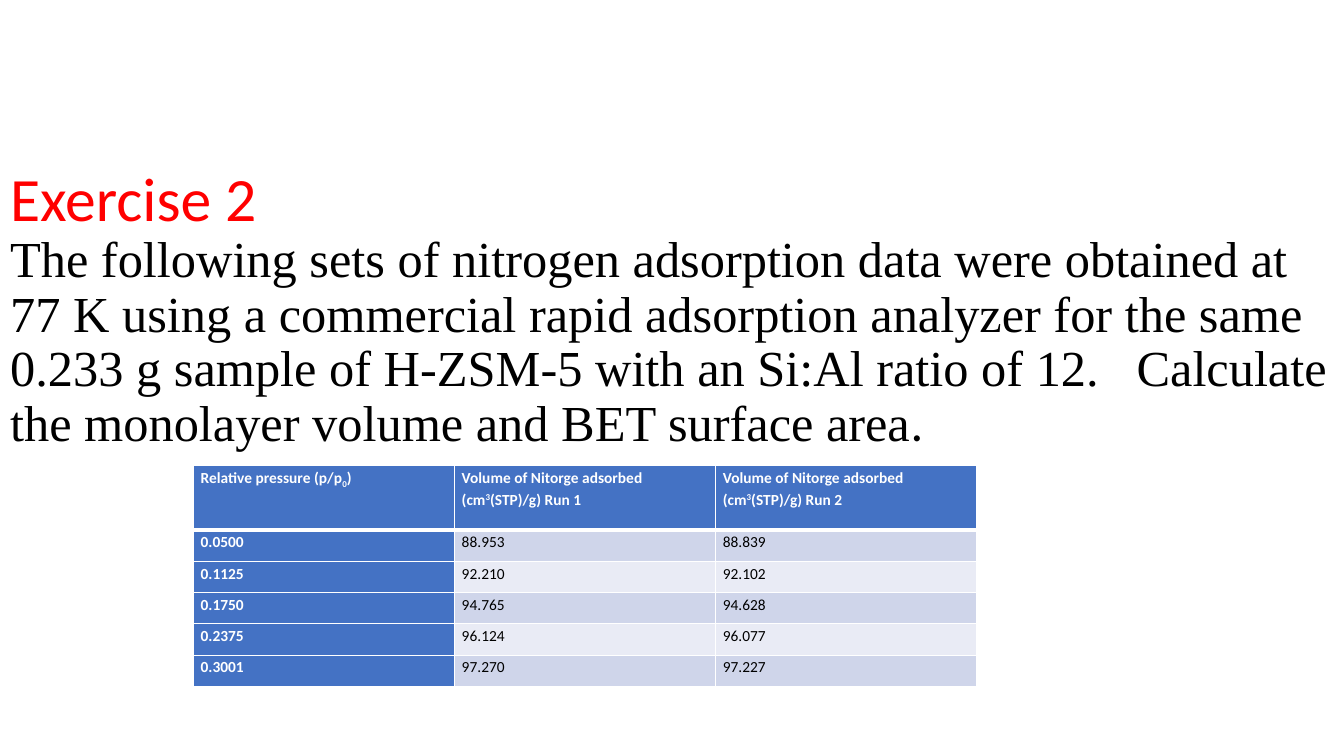
import pptx
import pptx.util
import pptx.dml.color
import pptx.enum.text
import lxml.etree
import pptx.oxml.ns
from pptx.util import Inches

RED = pptx.dml.color.RGBColor(0xFF, 0x00, 0x00)
BLACK = pptx.dml.color.RGBColor(0x00, 0x00, 0x00)
WHITE = pptx.dml.color.RGBColor(0xFF, 0xFF, 0xFF)
BLUE = pptx.dml.color.RGBColor(0x44, 0x72, 0xC4)
BANDS = [
    pptx.dml.color.RGBColor(0xCF, 0xD5, 0xEA),
    pptx.dml.color.RGBColor(0xE9, 0xEB, 0xF5),
]


def add_run(paragraph, text, size, font_name, color):
    run = paragraph.add_run()
    run.text = text
    run.font.size = pptx.util.Pt(size)
    run.font.name = font_name
    run.font.color.rgb = color


def set_borders(cell, widths):
    properties = cell._tc.get_or_add_tcPr()
    for index, (side, width) in enumerate(widths.items()):
        line = lxml.etree.Element(pptx.oxml.ns.qn(f"a:{side}"), w=str(pptx.util.Pt(width)))
        fill = lxml.etree.SubElement(line, pptx.oxml.ns.qn("a:solidFill"))
        lxml.etree.SubElement(fill, pptx.oxml.ns.qn("a:srgbClr"), val=str(WHITE))
        properties.insert(index, line)


presentation = pptx.Presentation()
presentation.slide_width = Inches(13.33)
presentation.slide_height = Inches(7.5)
slide = presentation.slides.add_slide(presentation.slide_layouts[5])

title = slide.shapes.title
title.left, title.top = Inches(0), Inches(0)
title.width, title.height = Inches(13.33), Inches(7.5)
frame = title.text_frame
frame.word_wrap = True
frame.auto_size = pptx.enum.text.MSO_AUTO_SIZE.NONE
frame.vertical_anchor = pptx.enum.text.MSO_ANCHOR.MIDDLE
frame.margin_left = frame.margin_right = Inches(0.1)
frame.margin_top = Inches(0.05)
frame.margin_bottom = Inches(1.4)
paragraph = frame.paragraphs[0]
paragraph.alignment = pptx.enum.text.PP_ALIGN.LEFT
paragraph.line_spacing = 0.9
add_run(paragraph, "Exercise 2", 44, "Calibri", RED)
paragraph.add_line_break()
add_run(
    paragraph,
    "The following sets of nitrogen adsorption data were obtained at 77 K using a "
    "commercial rapid adsorption analyzer for the same 0.233 g sample of H-ZSM-5 with "
    "an Si:Al ratio of 12.   Calculate the monolayer volume and BET surface area",
    36, "Times New Roman", BLACK,
)
add_run(paragraph, ".", 36, "Calibri", BLACK)

volume_start = ("Volume of Nitorge adsorbed (cm", 0)
rows = [
    [
        [("Relative pressure (p/p", 0), ("0", -25), (")", 0)],
        [volume_start, ("3", 30), ("(STP)/g) Run 1", 0)],
        [volume_start, ("3", 30), ("(STP)/g) Run 2", 0)],
    ]
]
for values in [
    ("0.0500", "88.953", "88.839"),
    ("0.1125", "92.210", "92.102"),
    ("0.1750", "94.765", "94.628"),
    ("0.2375", "96.124", "96.077"),
    ("0.3001", "97.270", "97.227"),
]:
    rows.append([[(value, 0)] for value in values])

table = slide.shapes.add_table(
    len(rows), 3, Inches(1.92), Inches(4.62), Inches(7.78), Inches(2.17)
).table
table.first_col = True
for column in table.columns:
    column.width = Inches(2.59)

for row_index, row in enumerate(rows):
    table.rows[row_index].height = Inches(0.31 if row_index else 0.64)
    for column_index, pieces in enumerate(row):
        cell = table.cell(row_index, column_index)
        heading = row_index == 0 or column_index == 0
        cell.margin_left = cell.margin_right = Inches(0.07)
        cell.margin_top = cell.margin_bottom = Inches(0)
        cell.fill.solid()
        cell.fill.fore_color.rgb = BLUE if heading else BANDS[(row_index - 1) % 2]
        set_borders(cell, {
            "lnL": 1,
            "lnR": 1,
            "lnT": 3 if row_index == 1 else 1,
            "lnB": 3 if row_index == 0 else 1,
        })
        paragraph = cell.text_frame.paragraphs[0]
        paragraph.line_spacing = 1.15
        paragraph.font.size = pptx.util.Pt(11)
        paragraph.font.name = "Calibri"
        paragraph.font.bold = heading
        paragraph.font.color.rgb = WHITE if heading else BLACK
        for text, baseline in pieces:
            run = paragraph.add_run()
            run.text = text
            if baseline:
                run.font._element.set("baseline", str(baseline * 1000))

presentation.save("out.pptx")
